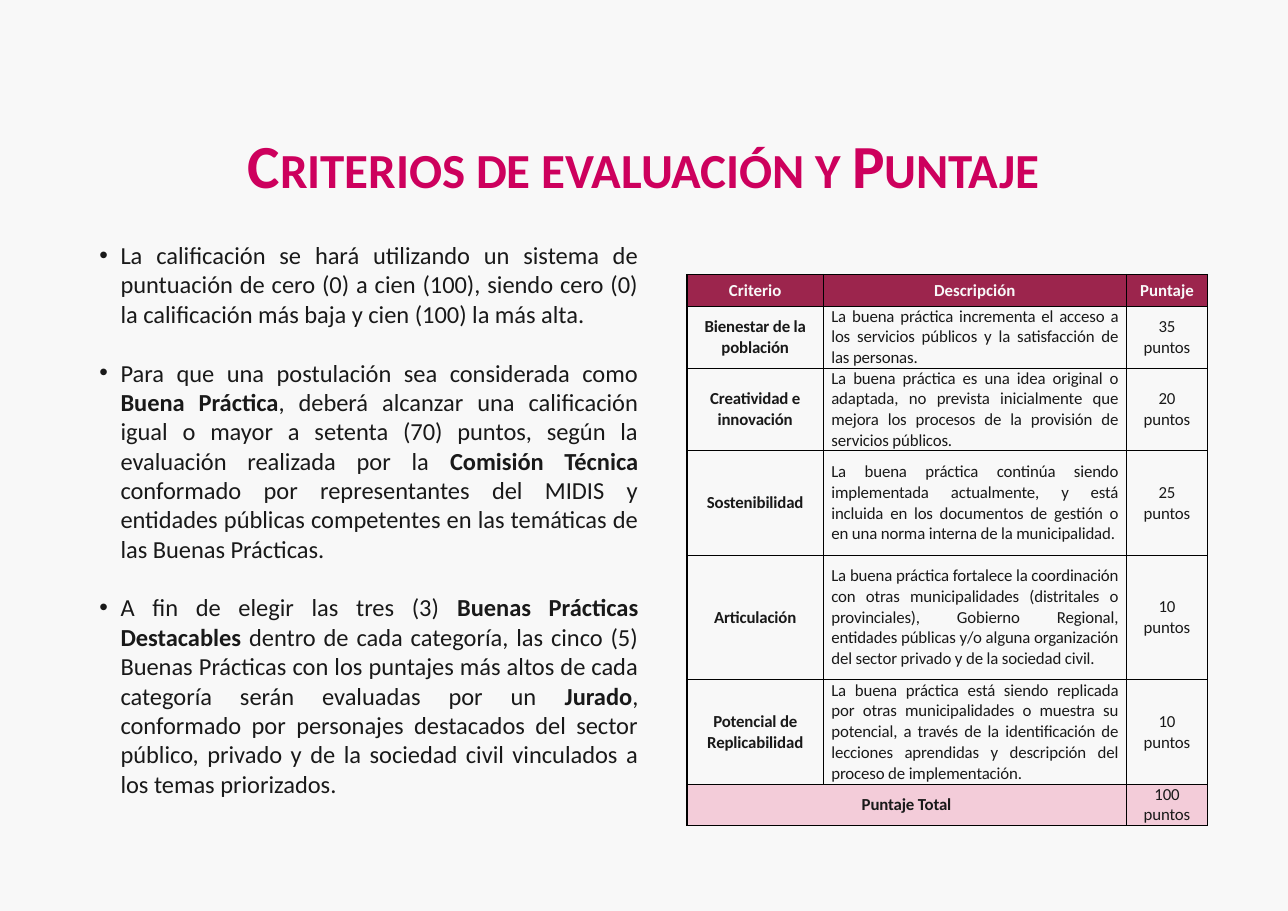
from lxml import etree
from pptx import Presentation
from pptx.dml.color import RGBColor
from pptx.enum.text import MSO_ANCHOR, PP_ALIGN
from pptx.oxml.ns import qn
from pptx.util import Cm, Pt

CENTER, JUSTIFY = PP_ALIGN.CENTER, PP_ALIGN.JUSTIFY
MIDDLE = MSO_ANCHOR.MIDDLE
PINK = RGBColor(0xCD, 0x00, 0x5D)
WINE = RGBColor(0x9C, 0x25, 0x4D)
ROSE = RGBColor(0xF3, 0xCC, 0xD9)
DARK = RGBColor(0x19, 0x19, 0x19)
PALE = RGBColor(0xF8, 0xF8, 0xF8)
BLACK = "000000"
FONT = "Calibri"

# Each point alternates plain and bold text.
POINTS = [
    ["La calificación se hará utilizando un sistema de puntuación de cero (0) "
     "a cien (100), siendo cero (0) la calificación más baja y cien (100) la más alta."],
    ["Para que una postulación sea considerada como ", "Buena Práctica",
     ", deberá alcanzar una calificación igual o mayor a setenta (70) puntos, "
     "según la evaluación realizada por la ", "Comisión Técnica ",
     "conformado por representantes del MIDIS y entidades públicas competentes "
     "en las temáticas de las Buenas Prácticas."],
    ["A fin de elegir las tres (3) ", "Buenas Prácticas Destacables",
     " dentro de cada categoría, las cinco (5) Buenas Prácticas con los puntajes "
     "más altos de cada categoría serán evaluadas por un ", "Jurado",
     ", conformado por personajes destacados del sector público, privado y de la "
     "sociedad civil vinculados a los temas priorizados."],
]
# Row height in cm, then the cell texts.
ROWS = [
    (0.72, "Criterio", "Descripción", "Puntaje"),
    (1.43, "Bienestar de la población",
     "La buena práctica incrementa el acceso a los servicios públicos y la "
     "satisfacción de las personas.", "35 puntos"),
    (1.91, "Creatividad e innovación",
     "La buena práctica es una idea original o adaptada, no prevista inicialmente "
     "que mejora los procesos de la provisión de servicios públicos.", "20 puntos"),
    (2.4, "Sostenibilidad",
     "La buena práctica continúa siendo implementada actualmente, y está incluida "
     "en los documentos de gestión o en una norma interna de la municipalidad.",
     "25 puntos"),
    (2.88, "Articulación",
     "La buena práctica fortalece la coordinación con otras municipalidades "
     "(distritales o provinciales), Gobierno Regional, entidades públicas y/o alguna "
     "organización del sector privado y de la sociedad civil.", "10 puntos"),
    (2.4, "Potencial de Replicabilidad",
     "La buena práctica está siendo replicada por otras municipalidades o muestra su "
     "potencial, a través de la identificación de lecciones aprendidas y descripción "
     "del proceso de implementación.", "10 puntos"),
    (0.96, "Puntaje Total", "", "100 puntos"),
]
WIDTHS = [3.15, 6.98, 1.88]


def style(run, size, color, bold):
    run.font.name = FONT
    run.font.size = Pt(size)
    run.font.color.rgb = color
    run.font.bold = bold


def border(cell, sides):
    """Draw cell edges; sides maps L, R, T and B to widths in points."""
    props = cell._tc.get_or_add_tcPr()
    for side, width in sides.items():
        line = etree.SubElement(props, qn("a:ln" + side), w=str(Pt(width)))
        fill = etree.SubElement(line, qn("a:solidFill"))
        etree.SubElement(fill, qn("a:srgbClr"), val=BLACK)


deck = Presentation()
deck.slide_width, deck.slide_height = Cm(29.7), Cm(21)
slide = deck.slides.add_slide(deck.slide_layouts[6])
slide.background.fill.solid()
slide.background.fill.fore_color.rgb = PALE

# Title
frame = slide.shapes.add_textbox(Cm(2.04), Cm(2.57), Cm(25.6), Cm(2.62)).text_frame
frame.word_wrap = True
frame.vertical_anchor = MIDDLE
frame.text = "Criterios de evaluación y Puntaje"
title = frame.paragraphs[0]
title.alignment = CENTER
title.line_spacing = 0.9
style(title.runs[0], 40, PINK, True)
title.runs[0]._r.get_or_add_rPr().set("cap", "small")

# Bulleted points
frame = slide.shapes.add_textbox(Cm(2.04), Cm(5.41), Cm(12.93), Cm(13.33)).text_frame
frame.word_wrap = True
for i, parts in enumerate(POINTS):
    para = frame.add_paragraph() if i else frame.paragraphs[0]
    para.alignment = JUSTIFY
    para.line_spacing = Pt(19.2)
    if i:
        para.space_before = Pt(19.2)
    props = para._p.get_or_add_pPr()
    props.set("marL", str(Cm(0.49)))
    props.set("indent", str(Cm(-0.49)))
    etree.SubElement(props, qn("a:buFont"), typeface="Arial")
    etree.SubElement(props, qn("a:buChar"), char="•")
    for j, part in enumerate(parts):
        run = para.add_run()
        run.text = part
        style(run, 16, DARK, j % 2 == 1)

# Score table
last = len(ROWS) - 1
height = sum(row[0] for row in ROWS)
table = slide.shapes.add_table(len(ROWS), len(WIDTHS), Cm(15.84), Cm(6.33),
                               Cm(sum(WIDTHS)), Cm(height)).table
for col, width in zip(table.columns, WIDTHS):
    col.width = Cm(width)
table.cell(last, 0).merge(table.cell(last, 1))
for r, (tall, *texts) in enumerate(ROWS):
    table.rows[r].height = Cm(tall)
    for c, text in enumerate(texts):
        cell = table.cell(r, c)
        border(cell, {"L": 1 if c == 0 else 0.5, "R": 1 if c == 2 else 0.5,
                      "T": 1 if r == 0 else 0.5, "B": 1 if r == last else 0.5})
        if r in (0, last):
            cell.fill.solid()
            cell.fill.fore_color.rgb = ROSE if r else WINE
        else:
            cell.fill.background()
        cell.vertical_anchor = MIDDLE
        if r:
            cell.margin_left = cell.margin_right = Cm(0.18)
            cell.margin_top = cell.margin_bottom = 0
        if not text:
            continue
        cell.text_frame.text = text
        para = cell.text_frame.paragraphs[0]
        para.alignment = JUSTIFY if r and c == 1 else CENTER
        run = para.runs[0]
        style(run, 11, DARK if r else PALE, r == 0 or c == 0)
        if r:
            run._r.get_or_add_rPr().set("spc", "-10")

deck.save("out.pptx")
